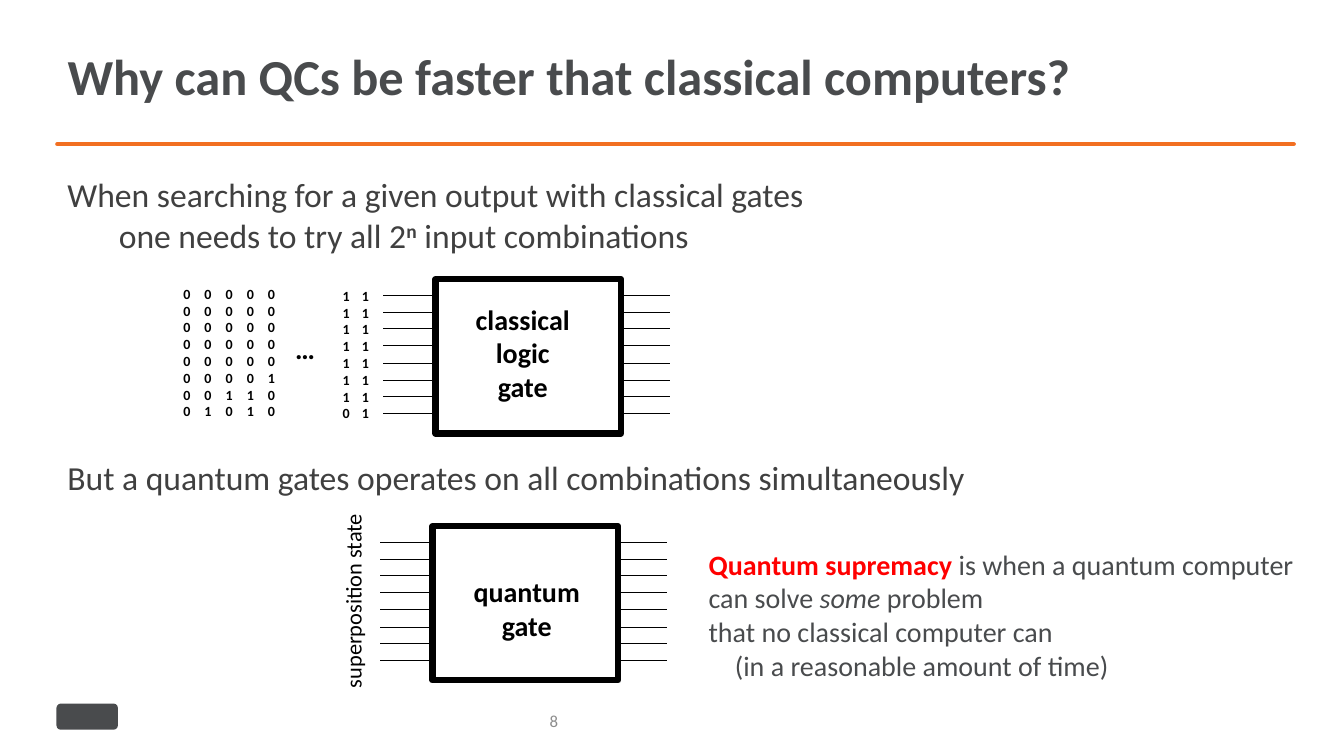
from dataclasses import dataclass

from lxml.etree import SubElement
from pptx import Presentation
from pptx.dml.color import RGBColor
from pptx.enum.shapes import MSO_CONNECTOR as Connector, MSO_SHAPE as Preset
from pptx.enum.text import MSO_ANCHOR as Anchor, MSO_AUTO_SIZE as AutoSize, PP_ALIGN as Align
from pptx.oxml.ns import qn
from pptx.util import Pt

EMU_PER_PX = 9144  # 100 px to the inch


@dataclass(frozen=True)
class Theme:
    font: str = "Calibri"
    ink: str = "000000"
    paper: str = "FFFFFF"
    heading: str = "494B4D"
    body: str = "404040"
    muted: str = "8C8C8C"
    accent: str = "F26F21"
    alert: str = "FF0000"
    title_size: int = 36
    body_size: int = 24
    label_size: int = 20
    side_size: int = 16
    number_size: int = 12
    bit_size: int = 10


def px(length):
    return round(length * EMU_PER_PX)


class SlideBuilder:
    def __init__(self, slide, theme):
        self.slide = slide
        self.theme = theme

    def add_run(self, paragraph, text, size, color, bold=False, italic=False, raised=False):
        run = paragraph.add_run()
        run.text = text
        run.font.name = self.theme.font
        run.font.size = Pt(size)
        run.font.bold = bold
        run.font.italic = italic
        run.font.color.rgb = RGBColor.from_string(color)
        if raised:
            run.font._element.set("baseline", "30000")

    def title(self, text, left, top, width, height):
        shape = self.slide.shapes.title
        shape.left, shape.top, shape.width, shape.height = map(px, (left, top, width, height))
        frame = shape.text_frame
        frame.auto_size = AutoSize.NONE
        frame.vertical_anchor = Anchor.MIDDLE
        paragraph = frame.paragraphs[0]
        paragraph.alignment = Align.LEFT
        paragraph.line_spacing = 0.9
        self.add_run(paragraph, text, self.theme.title_size, self.theme.heading, bold=True)

    def text(self, paragraphs, left, top, width, height, size, color, bold=False,
             align=Align.LEFT, anchor=Anchor.TOP, wrap=True, indents=None, rotation=0):
        """Each paragraph is a string or a list of (text, run style) pairs."""
        shape = self.slide.shapes.add_textbox(*map(px, (left, top, width, height)))
        shape.rotation = rotation
        frame = shape.text_frame
        frame.word_wrap = wrap
        frame.vertical_anchor = anchor
        for index, runs in enumerate(paragraphs):
            paragraph = frame.add_paragraph() if index else frame.paragraphs[0]
            paragraph.alignment = align
            if indents and indents[index]:
                paragraph._p.get_or_add_pPr().set("marL", str(px(indents[index])))
            for text, style in [(runs, {})] if isinstance(runs, str) else runs:
                self.add_run(paragraph, text, size, **{"color": color, "bold": bold, **style})

    def line(self, left, top, right, color, weight, rounded=False):
        connector = self.slide.shapes.add_connector(
            Connector.STRAIGHT, px(left), px(top), px(right), px(top))
        connector.line.color.rgb = RGBColor.from_string(color)
        connector.line.width = Pt(weight)
        if rounded:
            connector.line._get_or_add_ln().set("cap", "rnd")
        SubElement(connector._element.spPr, qn("a:effectLst"))

    def box(self, preset, left, top, width, height, fill, outline=None, weight=0):
        shape = self.slide.shapes.add_shape(preset, *map(px, (left, top, width, height)))
        shape.shadow.inherit = False
        shape.fill.solid()
        shape.fill.fore_color.rgb = RGBColor.from_string(fill)
        if outline:
            shape.line.color.rgb = RGBColor.from_string(outline)
            shape.line.width = Pt(weight)
        else:
            shape.line.fill.background()

    def gate(self, left, top, words, label_area):
        """Eight wires running behind a framed, labelled box."""
        for wire in range(8):
            self.line(left - 52, top + 16 + round(wire * 117 / 7), left + 233,
                      self.theme.ink, 0.5)
        self.box(Preset.RECTANGLE, left, top, 184, 153, self.theme.paper, self.theme.ink, 4.5)
        self.text(words, *label_area, self.theme.label_size, self.theme.ink,
                  bold=True, align=Align.CENTER)

    def bits(self, digits, left, top):
        self.text(digits, left, top, 27, 145, self.theme.bit_size, self.theme.ink,
                  bold=True, wrap=False)


def main():
    presentation = Presentation()
    presentation.slide_width, presentation.slide_height = px(1333), px(750)
    theme = Theme()
    slide = presentation.slides.add_slide(presentation.slide_layouts[5])
    builder = SlideBuilder(slide, theme)

    # Heading and footer
    builder.title("Why can QCs be faster that classical computers?", 57, 40, 1225, 78)
    builder.line(57, 143, 1283, theme.accent, 3.25, rounded=True)
    builder.box(Preset.ROUNDED_RECTANGLE, 56, 698, 61, 26, theme.heading)
    builder.text(["8"], 518, 695, 63, 40, theme.number_size, theme.muted,
                 align=Align.CENTER, anchor=Anchor.MIDDLE)

    # Statements
    builder.text(
        ["When searching for a given output with classical gates",
         [("one needs to try all 2", {}),
          ("n", {"bold": True, "raised": True}),
          (" input combinations", {})]],
        57, 168, 1225, 92, theme.body_size, theme.body, indents=[0, 51])
    builder.text(["But a quantum gates operates on all combinations simultaneously"],
                 57, 448, 1225, 51, theme.body_size, theme.body)

    # Classical gate and its inputs
    builder.gate(432, 277, ["classical", "logic", "gate"], (461, 295, 115, 111))
    first_inputs = ["00000000", "00000001", "00000010", "00000011", "00000100"]
    for column, digits in enumerate(first_inputs):
        builder.bits(digits, 172 + 21 * column, 278)
    for column, digits in enumerate(["11111110", "11111111"]):
        builder.bits(digits, 330 + 19 * column, 280)
    builder.text(["…"], 283, 324, 40, 44, theme.label_size, theme.ink, bold=True)

    # Quantum gate and its input
    builder.gate(429, 522, ["quantum", "gate"], (451, 565, 143, 77))
    builder.text(["superposition state"], 248, 572, 204, 37, theme.side_size, theme.ink,
                 rotation=270)

    # Definition
    builder.text(
        [[("Quantum supremacy ", {"color": theme.alert, "bold": True}),
          ("is when a quantum computer can solve ", {}),
          ("some", {"italic": True}),
          (" problem", {})],
         "that no classical computer can",
         "(in a reasonable amount of time)"],
        693, 538, 620, 145, theme.label_size, theme.heading, indents=[0, 0, 26])

    presentation.save("out.pptx")


if __name__ == "__main__":
    main()
